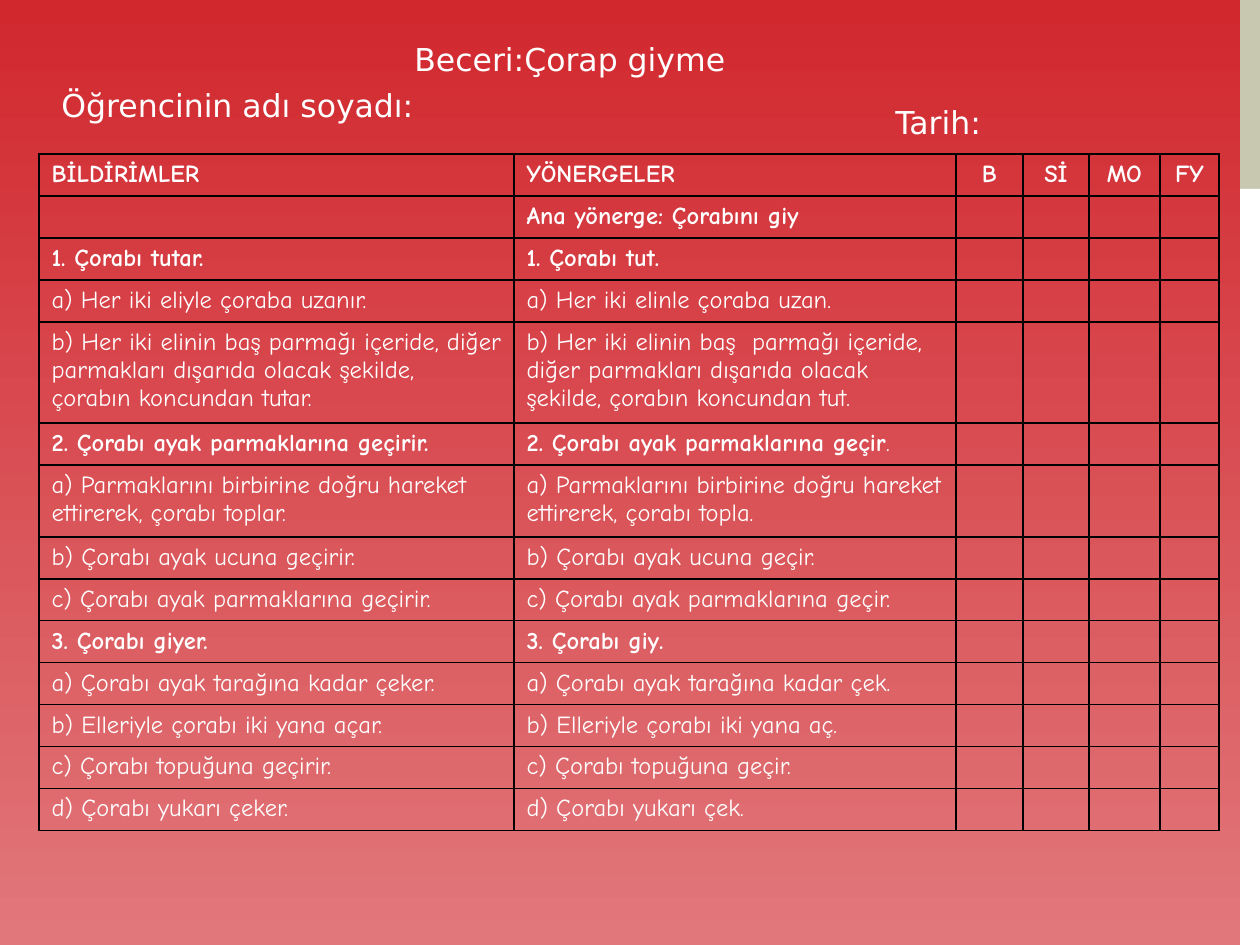
from lxml import etree
from pptx import Presentation
from pptx import util as u
from pptx.dml.color import RGBColor
from pptx.enum import shapes, text
from pptx.oxml.ns import qn

SCALE = 914400 / 126


def px(n):
    return u.Emu(round(n * SCALE))


def rgb(code):
    return RGBColor.from_string(code)


class Deck:
    ink, line = "FFFFFF", "000000"
    head, body = "DejaVu Sans", "Comic Neue"

    def __init__(self, wide, high):
        self.prs = Presentation()
        self.prs.slide_width, self.prs.slide_height = px(wide), px(high)
        self.slide = self.prs.slides.add_slide(self.prs.slide_layouts[6])

    def back(self, top, base):
        fill = self.slide.background.fill
        fill.gradient()
        fill.gradient_angle = 270
        for stop, code in zip(fill.gradient_stops, (top, base)):
            stop.color.rgb = rgb(code)

    def rect(self, x, y, w, h, code):
        box = self.slide.shapes.add_shape(
            shapes.MSO_SHAPE.RECTANGLE, px(x), px(y), px(w), px(h))
        box.shadow.inherit = False
        box.fill.solid()
        box.fill.fore_color.rgb = rgb(code)
        box.line.fill.background()

    def style(self, run, face, size, bold=False):
        font = run.font
        font.name, font.size, font.bold = face, u.Pt(size), bold
        font.color.rgb = rgb(self.ink)

    def label(self, x, y, w, h, words):
        frame = self.slide.shapes.add_textbox(px(x), px(y), px(w), px(h)).text_frame
        frame.word_wrap = True
        frame.auto_size = text.MSO_AUTO_SIZE.SHAPE_TO_FIT_TEXT
        frame.text = words
        self.style(frame.paragraphs[0].runs[0], self.head, 18)

    def border(self, cell):
        props = cell._tc.get_or_add_tcPr()
        for n, side in enumerate(("lnL", "lnR", "lnT", "lnB")):
            edge = etree.Element(qn("a:" + side), w=str(u.Pt(1)))
            fill = etree.SubElement(edge, qn("a:solidFill"))
            etree.SubElement(fill, qn("a:srgbClr"), val=self.line)
            props.insert(n, edge)

    def cell(self, cell, words, bold, align):
        cell.fill.background()
        self.border(cell)
        para = cell.text_frame.paragraphs[0]
        para.alignment = align
        if words:
            para.text = words
            self.style(para.runs[0], self.body, 14, bold)
        else:
            end = etree.SubElement(para._p, qn("a:endParaRPr"), sz="1400")
            etree.SubElement(end, qn("a:latin"), typeface=self.body)

    def table(self, x, y, cols, highs, rows):
        grid = self.slide.shapes.add_table(
            len(rows), len(cols), px(x), px(y), px(sum(cols)), px(sum(highs))).table
        grid.first_row = grid.horz_banding = False
        for col, w in zip(grid.columns, cols):
            col.width = px(w)
        for r, (h, row) in enumerate(zip(highs, rows)):
            grid.rows[r].height = px(h)
            for c in range(len(cols)):
                words = row[c] if c < len(row) else ""
                # Headings and numbered steps are bold, lettered steps are not
                bold = r < 2 or words[:1].isdigit()
                align = text.PP_ALIGN.LEFT
                if r == 0:
                    align = text.PP_ALIGN.JUSTIFY if c < 2 else text.PP_ALIGN.CENTER
                self.cell(grid.cell(r, c), words, bold, align)
        return grid


ROWS = [
    ("BİLDİRİMLER", "YÖNERGELER", "B", "Sİ", "MO", "FY"),
    ("", "Ana yönerge: Çorabını giy"),
    ("1. Çorabı tutar.", "1. Çorabı tut."),
    ("a) Her iki eliyle çoraba uzanır.", "a) Her iki elinle çoraba uzan."),
    ("b) Her iki elinin baş parmağı içeride, diğer parmakları dışarıda "
     "olacak şekilde, çorabın koncundan tutar.",
     "b) Her iki elinin baş  parmağı içeride, diğer parmakları dışarıda "
     "olacak şekilde, çorabın koncundan tut."),
    ("2. Çorabı ayak parmaklarına geçirir.", "2. Çorabı ayak parmaklarına geçir"),
    ("a) Parmaklarını birbirine doğru hareket ettirerek, çorabı toplar.",
     "a) Parmaklarını birbirine doğru hareket ettirerek, çorabı topla."),
    ("b) Çorabı ayak ucuna geçirir.", "b) Çorabı ayak ucuna geçir."),
    ("c) Çorabı ayak parmaklarına geçirir.", "c) Çorabı ayak parmaklarına geçir."),
    ("3. Çorabı giyer.", "3. Çorabı giy."),
    ("a) Çorabı ayak tarağına kadar çeker.", "a) Çorabı ayak tarağına kadar çek."),
    ("b) Elleriyle çorabı iki yana açar.", "b) Elleriyle çorabı iki yana aç."),
    ("c) Çorabı topuğuna geçirir.", "c) Çorabı topuğuna geçir."),
    ("d) Çorabı yukarı çeker.", "d) Çorabı yukarı çek."),
]


def main():
    deck = Deck(1260, 945)

    # Background and side strip
    deck.back("D1282E", "E1777B")
    deck.rect(1240, 0, 20, 189, "C8C8B1")
    deck.rect(1240, 189, 20, 756, "FFFFFF")

    # Skill steps; the long ones take two or three lines
    highs = [42] * len(ROWS)
    highs[4], highs[6] = 101, 72
    grid = deck.table(39, 154, (475, 442, 67, 66, 71, 59), highs, ROWS)
    dot = grid.cell(5, 1).text_frame.paragraphs[0].add_run()
    dot.text = "."
    deck.style(dot, deck.body, 14)

    # Skill, pupil and date
    deck.label(402, 34, 370, 50, "Beceri:Çorap giyme")
    deck.label(49, 80, 664, 50, "Öğrencinin adı soyadı:")
    deck.label(883, 97, 244, 50, "Tarih:")

    deck.prs.save("out.pptx")


if __name__ == "__main__":
    main()
